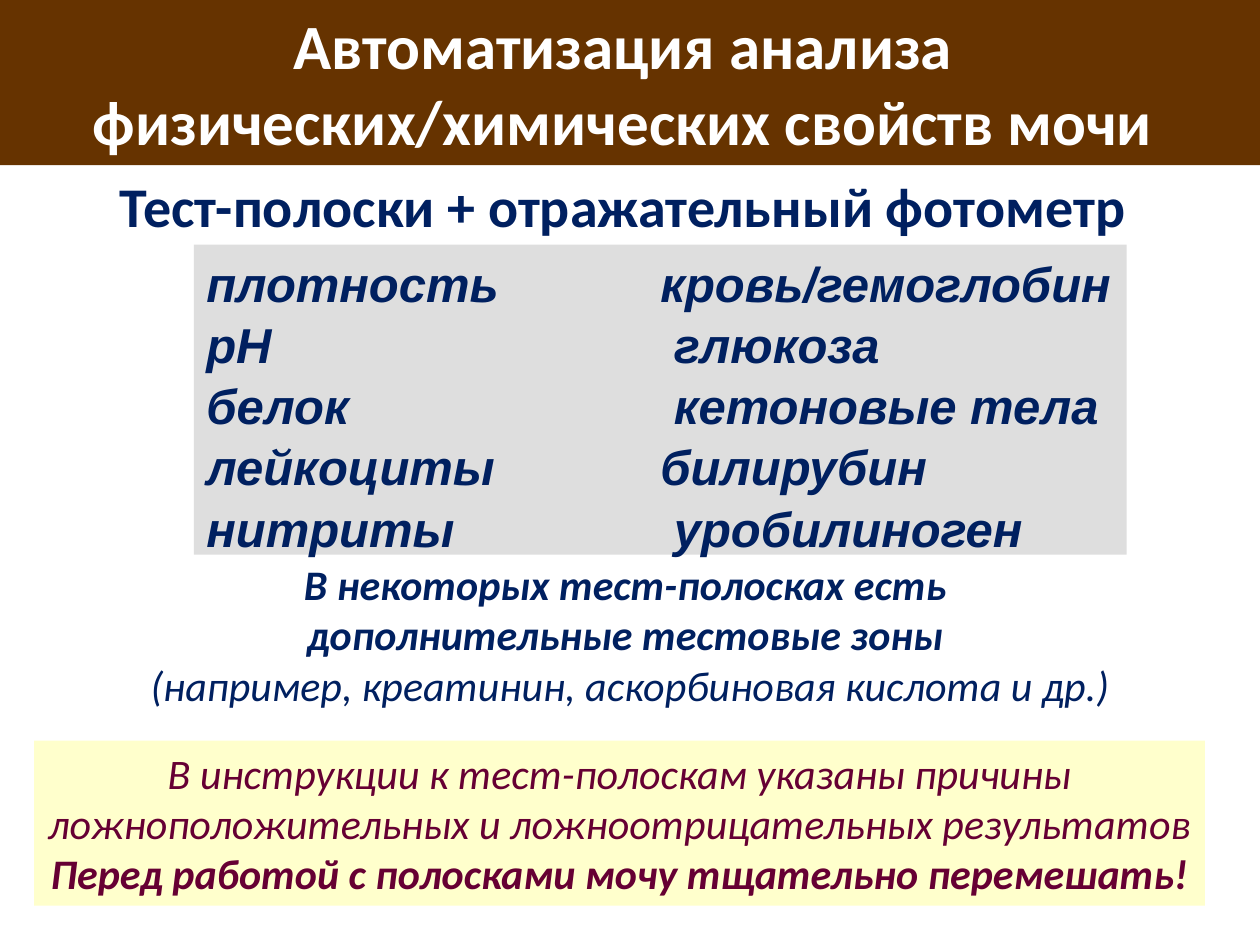
"""Build the slide on automated urine analysis with test strips."""
import pptx
import pptx.dml.color
import pptx.enum.text
import pptx.oxml.ns
import pptx.util
from lxml import etree
from pptx.util import Cm

NAVY, MAROON, WHITE = "002060", "660033", "FFFFFF"
CENTER = pptx.enum.text.PP_ALIGN.CENTER
LEFT = pptx.enum.text.PP_ALIGN.LEFT


def colour(value):
    return pptx.dml.color.RGBColor.from_string(value)


class Page:
    def __init__(self, deck, font="Calibri"):
        self.slide = deck.slides.add_slide(deck.slide_layouts[1])
        self.font = font

    def place(self, box, left, top, width, height, fill=None):
        box.left, box.top = Cm(left), Cm(top)
        box.width, box.height = Cm(width), Cm(height)
        if fill:
            box.fill.solid()
            box.fill.fore_color.rgb = colour(fill)
        frame = box.text_frame
        frame.word_wrap = True
        frame.auto_size = pptx.enum.text.MSO_AUTO_SIZE.NONE
        frame.margin_left = frame.margin_right = Cm(0.25)
        frame.margin_top = frame.margin_bottom = Cm(0.13)
        frame.vertical_anchor = pptx.enum.text.MSO_ANCHOR.TOP
        return frame

    def add_lines(self, frame, lines, size, ink, font=None, align=CENTER, spacing=1.0):
        for index, (text, bold, italic) in enumerate(lines):
            para = frame.paragraphs[0] if index == 0 else frame.add_paragraph()
            para.alignment = align
            para.line_spacing = spacing
            para.space_before = pptx.util.Pt(0)
            span = para.add_run()
            span.text = text
            span.font.name = font or self.font
            span.font.size = pptx.util.Pt(size)
            span.font.bold, span.font.italic = bold, italic
            span.font.color.rgb = colour(ink)

    def title(self, lines, area, fill):
        frame = self.place(self.slide.shapes.title, *area, fill)
        self.add_lines(frame, lines, 36, WHITE)

    def columns(self, lines, area, fill):
        frame = self.place(self.slide.placeholders[1], *area, fill)
        frame._txBody.bodyPr.set("numCol", "2")
        self.add_lines(frame, lines, 28, NAVY, "Arial", LEFT, 1.04)
        for para in frame.paragraphs:
            properties = para._p.get_or_add_pPr()
            properties.set("marL", "0")
            properties.set("indent", "0")
            etree.SubElement(properties, pptx.oxml.ns.qn("a:buNone"))

    def note(self, lines, area, size, ink, fill=None):
        box = self.slide.shapes.add_textbox(0, 0, 0, 0)
        self.add_lines(self.place(box, *area, fill), lines, size, ink)


def main():
    deck = pptx.Presentation()
    deck.slide_width, deck.slide_height = Cm(25.4), Cm(19.05)
    page = Page(deck)
    page.title(
        [("Автоматизация анализа ", True, False),
         ("физических/химических свойств мочи ", True, False)],
        (0, 0, 25.4, 3.33), "663300")
    page.note([("Тест-полоски + отражательный фотометр ", True, False)],
              (0.89, 3.33, 23.6, 1.62), 32, NAVY)
    tests = ["плотность", "рН", "белок", "лейкоциты", "нитриты",
             "кровь/гемоглобин", " глюкоза", " кетоновые тела",
             "билирубин", " уробилиноген"]
    page.columns([(test, True, True) for test in tests],
                 (3.91, 4.93, 18.8, 6.25), "DEDEDE")
    page.note(
        [("В некоторых тест-полосках есть ", True, True),
         ("дополнительные тестовые зоны ", True, True),
         ("(например, креатинин, аскорбиновая кислота и др.)", False, True)],
        (1.09, 11.13, 23.22, 3.33), 24, NAVY)
    page.note(
        [("В инструкции к тест-полоскам указаны причины "
          "ложноположительных и ложноотрицательных результатов ", False, True),
         ("Перед работой с полосками мочу тщательно перемешать!", True, True)],
        (0.69, 14.93, 23.6, 3.33), 24, MAROON, "FFFFCC")
    deck.save("out.pptx")


if __name__ == "__main__":
    main()
